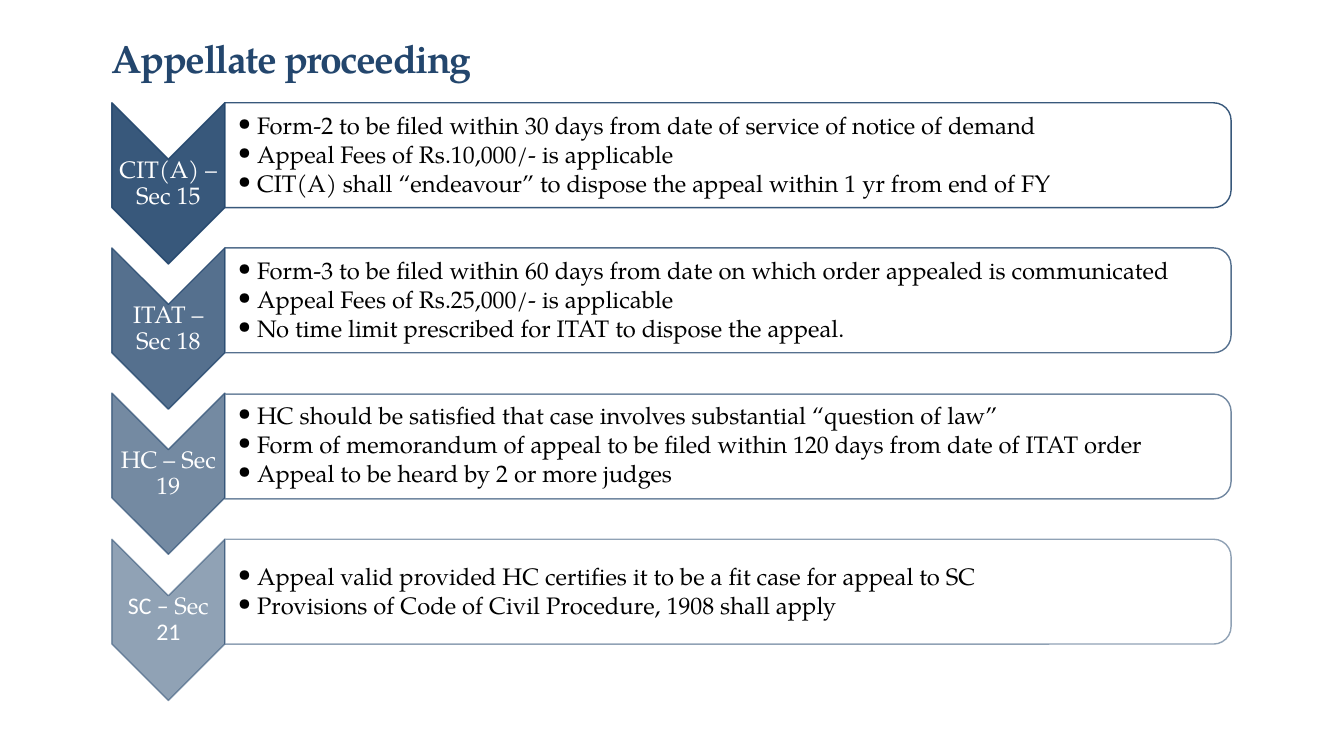
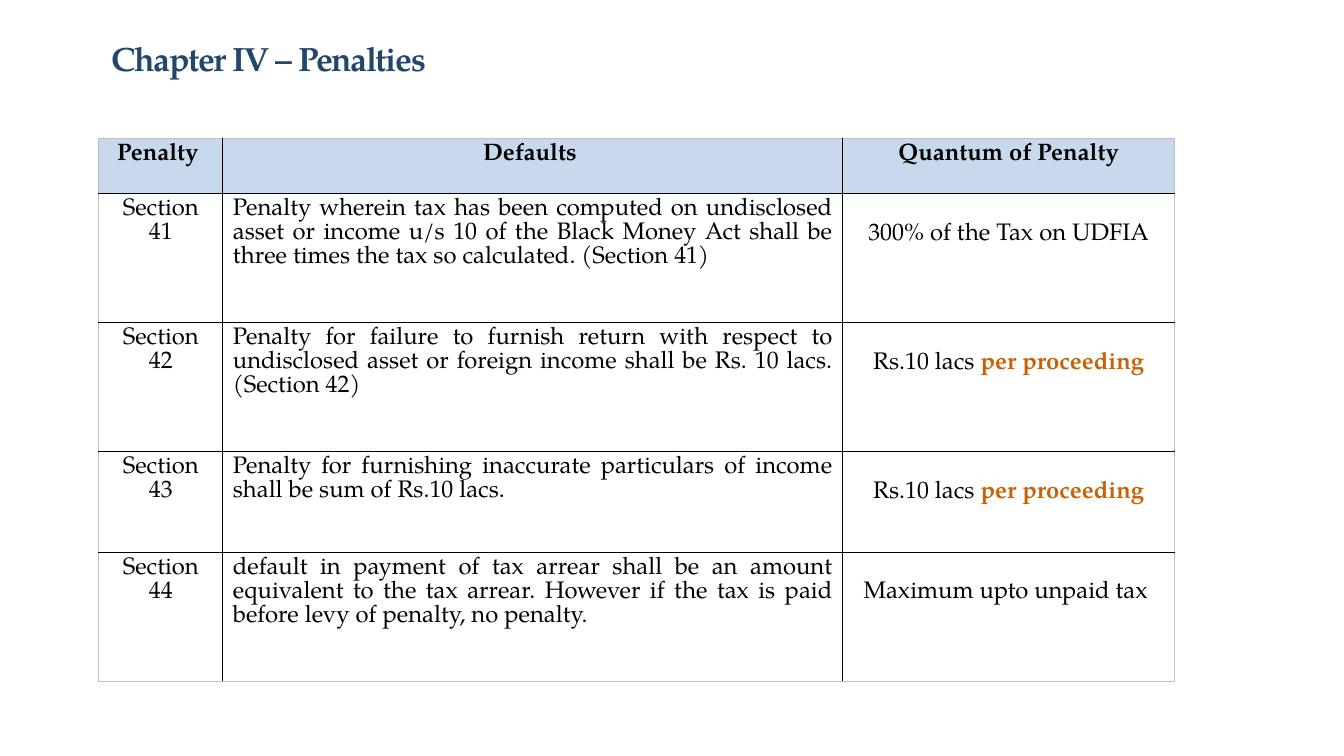
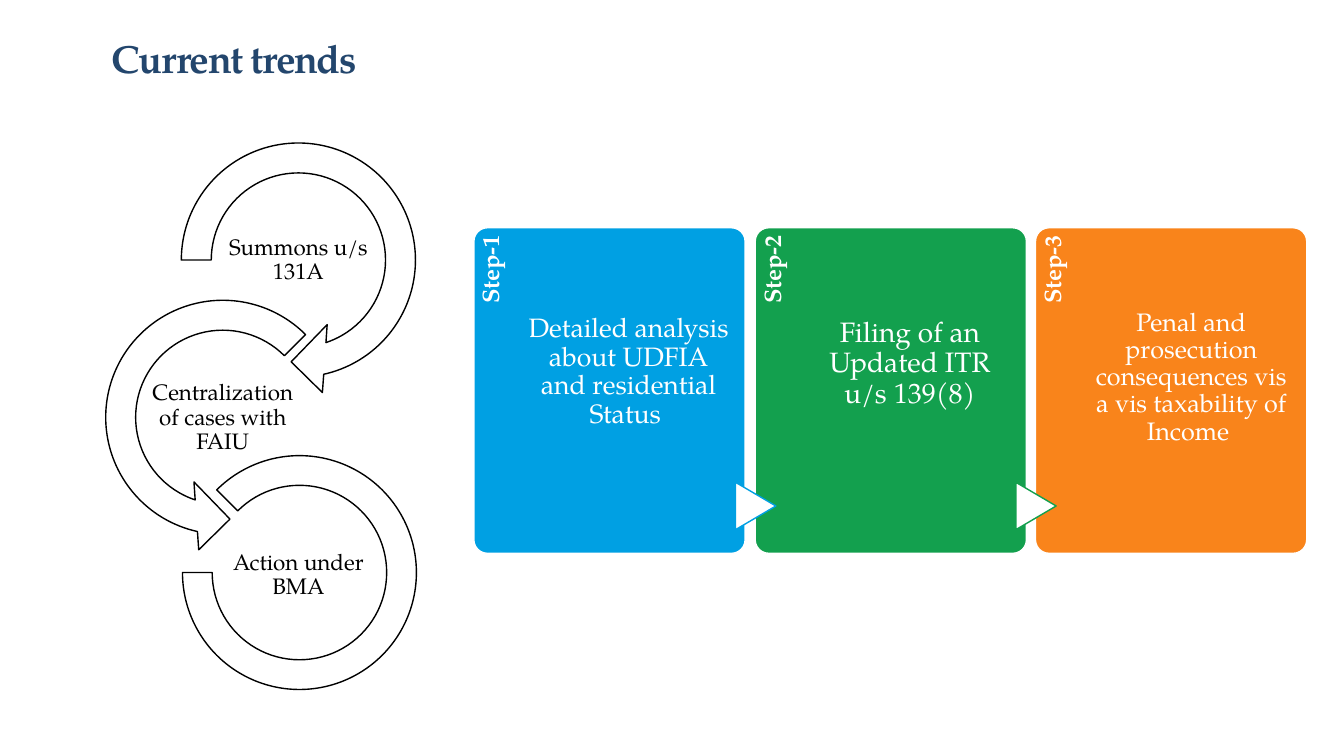
import pptx
import pptx.util
import pptx.dml.color
import pptx.enum.shapes
import pptx.enum.text
from lxml import etree

PX = 9144  # one px is a hundredth of an inch
PT = pptx.util.Pt
KIND = pptx.enum.shapes.MSO_SHAPE
ALIGN = pptx.enum.text.PP_ALIGN
ANCHOR = pptx.enum.text.MSO_ANCHOR
rgb = pptx.dml.color.RGBColor.from_string
NS = "http://schemas.openxmlformats.org/drawingml/2006/main"

NAVY, WHITE, BLACK = "23466D", "FFFFFF", "000000"
HEADER_BLUE, EMPHASIS, OUTER_GREY = "C8D9ED", "CA6205", "BFBFBF"
SERIF, SANS = "TeX Gyre Pagella", "Calibri"
CENTRED = {"alignment": ALIGN.CENTER, "line_spacing": 0.9}


def draw(slide, kind, box, fill, line, rotation=0, opacity=100, adjust=()):
    shape = slide.shapes.add_shape(kind, *[round(v) * PX for v in box])
    shape.shadow.inherit = False
    shape.rotation = rotation
    for place, value in enumerate(adjust):
        shape.adjustments[place] = value
    shape.fill.solid()
    shape.fill.fore_color.rgb = rgb(fill)
    shape.line.color.rgb = rgb(line)
    shape.line.width = PT(1)
    if opacity < 100:
        for colour in shape._element.spPr.iter(f"{{{NS}}}srgbClr"):
            if str(colour.get("val")) != WHITE:
                etree.SubElement(colour, f"{{{NS}}}alpha", val=str(opacity * 1000))


def write(target, paragraphs, layout, font, margins=(1, 1, 1, 1), anchor=ANCHOR.MIDDLE):
    """Fill a text box given as (slide, box, rotation), or a table cell."""
    if isinstance(target, tuple):
        slide, box, rotation = target
        holder = slide.shapes.add_textbox(*[round(v) * PX for v in box])
        holder.rotation = rotation
        frame = holder.text_frame
        frame.word_wrap = True
    else:
        holder, frame = target, target.text_frame
    owner = frame if isinstance(target, tuple) else holder
    owner.vertical_anchor = anchor
    for side, margin in zip(("left", "top", "right", "bottom"), margins):
        setattr(owner, "margin_" + side, margin * PX)
    for number, runs in enumerate(paragraphs):
        paragraph = frame.add_paragraph() if number else frame.paragraphs[0]
        for name, value in layout.items():
            if number or name != "space_before":
                setattr(paragraph, name, value)
        for text, changes in runs:
            run = paragraph.add_run()
            run.text = text
            values = {"name": SERIF, "color": BLACK, **font, **changes}
            run.font.color.rgb = rgb(values.pop("color"))
            for name, value in values.items():
                setattr(run.font, name, value)
    return frame


deck = pptx.Presentation()
deck.slide_width, deck.slide_height = 1333 * PX, 750 * PX

# Titles, shared by all slides
slides = []
for title, size in (("Appellate proceeding", 28), ("Chapter IV – Penalties", 24),
                    ("Current trends", 28)):
    slide = deck.slides.add_slide(deck.slide_layouts[6])
    frame = write((slide, (100, 17, 1150, 86), 0), [[(title, {})]], {"line_spacing": 0.9},
                  {"size": PT(size), "bold": True, "color": NAVY}, (11, 5, 10, 5))
    frame.paragraphs[0].runs[0].font._element.set("spc", "-100")
    slides.append(slide)
appeals, penalties, trends = slides

# Appeal levels: chevron on the left, bullets on the right
levels = [
    ([("CIT(A) – Sec 15", {})], 90, [
        "Form-2 to be filed within 30 days from date of service of notice of demand",
        "Appeal Fees of Rs.10,000/- is applicable",
        "CIT(A) shall “endeavour” to dispose the appeal within 1 yr from end of FY"]),
    ([("ITAT – Sec 18", {})], 77, [
        "Form-3 to be filed within 60 days from date on which order appealed is communicated",
        "Appeal Fees of Rs.25,000/- is applicable",
        "No time limit prescribed for ITAT to dispose the appeal."]),
    ([("HC – Sec 19", {})], 63, [
        "HC should be satisfied that case involves substantial “question of law”",
        "Form of memorandum of appeal to be filed within 120 days from date of ITAT order",
        "Appeal to be heard by 2 or more judges"]),
    ([("SC – ", {"name": SANS}), ("Sec", {}), (" 21", {"name": SANS})], 50, [
        "Appeal valid provided HC certifies it to be a fit case for appeal to SC",
        "Provisions of Code of Civil Procedure, 1908 shall apply"]),
]
for row, (level, opacity, points) in enumerate(levels):
    top = 102 + 144.25 * row
    draw(appeals, KIND.CHEVRON, (87, top + 24, 160, 112), NAVY, NAVY, 90, opacity)
    write((appeals, (111, top + 56, 112, 48), 0), [level], CENTRED,
          {"size": PT(17), "color": WHITE}, (4, 1, 4, 1))
    draw(appeals, KIND.ROUND_2_SAME_RECTANGLE, (670, top - 447, 104, 998),
         WHITE, NAVY, 90, opacity)
    frame = write((appeals, (223, top + 6, 993, 94), 0), [[(point, {})] for point in points],
                  {"line_spacing": 0.9, "space_before": PT(2.3)}, {"size": PT(17)},
                  (13, 1, 1, 2))
    for paragraph in frame.paragraphs:
        properties = paragraph._p.get_or_add_pPr()
        properties.set("marL", str(19 * PX))
        properties.set("indent", str(-19 * PX))
        etree.SubElement(properties, f"{{{NS}}}buFont", typeface=SERIF)
        etree.SubElement(properties, f"{{{NS}}}buChar", char="•")

# Penalty table
per_proceeding = [("Rs.10 lacs ", {}), ("per proceeding", {"bold": True, "color": EMPHASIS})]
rows = [
    ("Penalty ", "Defaults ", [("Quantum of Penalty", {})]),
    ("Section 41", "Penalty wherein tax has been computed on undisclosed asset or income u/s 10 "
     "of the Black Money Act shall be three times the tax so calculated. (Section 41) ",
     [("300% of the Tax on UDFIA", {})]),
    ("Section 42", "Penalty for failure to furnish return with respect to undisclosed asset or "
     "foreign income shall be Rs. 10 lacs. (Section 42)", per_proceeding),
    ("Section 43", "Penalty for furnishing inaccurate particulars of income shall be sum of "
     "Rs.10 lacs.", per_proceeding),
    ("Section 44", "default in payment of tax arrear shall be an amount equivalent to the tax "
     "arrear. However if the tax is paid before levy of penalty, no penalty. ",
     [("Maximum upto unpaid tax ", {})]),
]
widths, heights = (123, 615, 329), (55, 128, 128, 100, 128)
table = penalties.shapes.add_table(len(rows), len(widths), 98 * PX, 137 * PX,
                                   sum(widths) * PX, sum(heights) * PX).table
table.first_row = table.horz_banding = False
for column, width in zip(table.columns, widths):
    column.width = width * PX
for r, (section, default, quantum) in enumerate(rows):
    table.rows[r].height = heights[r] * PX
    for c, runs in enumerate(([(section, {})], [(default, {})], quantum)):
        cell = table.cell(r, c)
        justified = r > 0 and c == 1
        lowered = r > 0 and c == 2
        write(cell, [runs], {"alignment": ALIGN.JUSTIFY if justified else ALIGN.CENTER},
              {"size": PT(17), "bold": r == 0}, (10, 29 if lowered else 5, 10, 5), ANCHOR.TOP)
        edges = {"lnL": c == 0, "lnR": c == len(widths) - 1,
                 "lnT": r == 0, "lnB": r == len(rows) - 1}
        for edge, outer in edges.items():
            border = etree.SubElement(cell._tc.get_or_add_tcPr(), f"{{{NS}}}{edge}",
                                      w=str(PT(0.5 if outer else 1)))
            paint = etree.SubElement(border, f"{{{NS}}}solidFill")
            etree.SubElement(paint, f"{{{NS}}}srgbClr", val=OUTER_GREY if outer else BLACK)
        if r == 0:
            cell.fill.solid()
            cell.fill.fore_color.rgb = rgb(HEADER_BLUE)
        else:
            cell.fill.background()

# Chain of round arrows
chain = [
    ("Summons u/s 131A", KIND.CIRCULAR_ARROW, (161, 123, 270, 270),
     (0.11, 11.423, 45, 108, 0.125), (221, 221)),
    ("Centralization of cases with FAIU", KIND.LEFT_CIRCULAR_ARROW, (86, 279, 270, 270),
     (0.11, 11.423, 63, 189, 0.125), (146, 377)),
    ("Action under BMA", KIND.BLOCK_ARC, (181, 452, 232, 232),
     (135, 108, 0.127), (221, 533)),
]
for label, kind, box, adjust, corner in chain:
    draw(trends, kind, box, WHITE, BLACK, adjust=adjust)
    write((trends, (*corner, 150, 75), 0), [[(label, {})]], CENTRED, {"size": PT(16)})

# Step cards, each joined to the one before by a small triangle
steps = [
    ("00A0E3", 19, "Detailed analysis about UDFIA and residential Status "),
    ("13A04E", 20, "Filing of an Updated ITR u/s 139(8)"),
    ("F9841B", 18, "Penal and prosecution consequences vis a vis taxability of Income "),
]
for number, (colour, size, text) in enumerate(steps):
    left = 470 + 278.6 * number
    draw(trends, KIND.ROUNDED_RECTANGLE, (left, 226, 269, 323), colour, WHITE, adjust=[0.05])
    write((trends, (left - 106, 331, 265, 54), 270), [[(f"Step-{number + 1}", {})]],
          {"alignment": ALIGN.RIGHT, "line_spacing": 0.9},
          {"size": PT(17), "bold": True, "color": WHITE}, (0, 6, 8, 0), ANCHOR.TOP)
    if number:
        draw(trends, KIND.FLOWCHART_EXTRACT, (left - 23, 482, 47, 40),
             WHITE, steps[number - 1][0], 90)
    write((trends, (left + 53.4, 226, 201, 323), 0), [[(text, {})]], CENTRED,
          {"size": PT(size), "color": WHITE}, (0, round(4.5 * size), 0, 0), ANCHOR.TOP)

deck.save("out.pptx")
